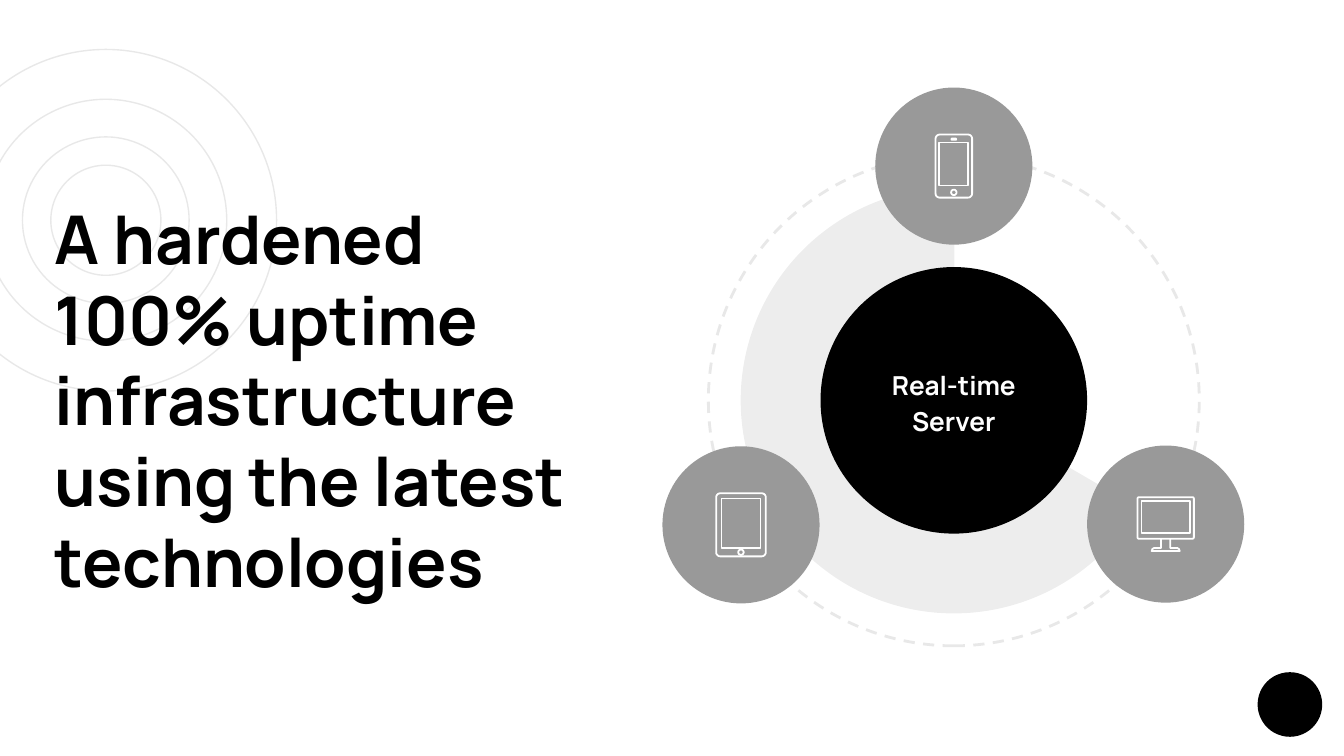
"""Build a slide with a headline beside a real-time server hub and three client devices."""
import math

from lxml import etree
from pptx import Presentation, dml, util as u
from pptx.dml import color as dml_color
from pptx.enum import dml as line_styles, shapes, text
from pptx.oxml import ns

BLACK, WHITE, GREY, PALE = "000000", "FFFFFF", "999999", "E8E8E8"
SHAPE = shapes.MSO_SHAPE
DETAIL = 100


def rgb(value):
    return dml_color.RGBColor.from_string(value)


def rounded(x, y, width, height, radius=0):
    """Return the closed outline of a rounded rectangle centred on (x, y)."""
    if not radius:
        right, bottom = width / 2, height / 2
        return [(x + right, y + bottom), (x - right, y + bottom),
                (x - right, y - bottom), (x + right, y - bottom)], True
    points = []
    for quarter, (side, level) in enumerate([(1, 1), (-1, 1), (-1, -1), (1, -1)]):
        corner_x = x + side * (width / 2 - radius)
        corner_y = y + level * (height / 2 - radius)
        for step in range(6):
            angle = math.radians(90 * quarter + 18 * step)
            points.append((corner_x + radius * math.cos(angle),
                           corner_y + radius * math.sin(angle)))
    return points, True


def stand(x, top, bottom):
    """Return the open outline of a monitor stand."""
    half = [(2.5, top), (2.5, bottom - 1.6), (6.2, bottom - 1.6),
            (7.1, bottom - 1.1), (7.5, bottom)]
    left = [(x - reach, y) for reach, y in half]
    right = [(x + reach, y) for reach, y in reversed(half)]
    return left + right, False


class Deck:
    """Hold the text style and the current slide."""

    font = {"name": "Manrope", "bold": True}

    def __init__(self, slide):
        self.slide = slide

    def paint(self, shape, fill=None, line=None, weight=0.75, alpha=None):
        shape.shadow.inherit = False
        if fill:
            shape.fill.solid()
            shape.fill.fore_color.rgb = rgb(fill)
        else:
            shape.fill.background()
        if alpha:
            color = shape.element.spPr.find(".//" + ns.qn("a:srgbClr"))
            etree.SubElement(color, ns.qn("a:alpha")).set("val", str(alpha * 1000))
        if line:
            shape.line.color.rgb = rgb(line)
            shape.line.width = u.Pt(weight)
        else:
            shape.line.fill.background()

    def disc(self, x, y, diameter, kind=SHAPE.OVAL, **style):
        corner = [u.Pt(value - diameter / 2) for value in (x, y)]
        shape = self.slide.shapes.add_shape(kind, *corner, u.Pt(diameter), u.Pt(diameter))
        self.paint(shape, **style)
        return shape

    def icon(self, x, y, outlines):
        builder = None
        for points, closed in outlines:
            start, *others = [((x + across) * DETAIL, (y + down) * DETAIL)
                              for across, down in points]
            if builder is None:
                builder = self.slide.shapes.build_freeform(*start, scale=u.Pt(1) / DETAIL)
            else:
                builder.move_to(*start)
            builder.add_line_segments(others, close=closed)
        self.paint(builder.convert_to_shape(), line=WHITE, weight=0.96)

    def words(self, box, lines, size, color, anchor=text.MSO_ANCHOR.TOP, **layout):
        frame = self.slide.shapes.add_textbox(*map(u.Pt, box)).text_frame
        margins = {f"margin_{side}": u.Pt(7.2) for side in ("left", "top", "right", "bottom")}
        for name, value in {"word_wrap": True, "vertical_anchor": anchor, **margins}.items():
            setattr(frame, name, value)
        for index, line in enumerate(lines):
            paragraph = frame.add_paragraph() if index else frame.paragraphs[0]
            run = paragraph.add_run()
            run.text = line
            for name, value in layout.items():
                setattr(paragraph, name, value)
            for name, value in {**self.font, "size": u.Pt(size)}.items():
                setattr(run.font, name, value)
            run.font.color.rgb = rgb(color)


def main():
    presentation = Presentation()
    presentation.slide_width, presentation.slide_height = u.Pt(720), u.Pt(405)
    deck = Deck(presentation.slides.add_slide(presentation.slide_layouts[6]))

    for diameter in (183, 89.3, 129.6, 59):
        deck.disc(56.7, 118, diameter, line=PALE)
    deck.disc(691, 377.4, 34.6, fill=BLACK)

    hub = (511, 214.5)
    orbit = deck.disc(*hub, 263, line=PALE, weight=1.5)
    orbit.rotation = 270
    orbit.line.dash_style = line_styles.MSO_LINE.DASH
    sector = deck.disc(*hub, 228.3, kind=SHAPE.PIE, fill=BLACK, alpha=7)
    sector.adjustments[0], sector.adjustments[1] = 18.116, 162.149
    deck.disc(*hub, 142.8, fill=BLACK)
    deck.words((458, 182.2, 106, 64.8), ["Real-time", "Server"], 14, WHITE,
               anchor=text.MSO_ANCHOR.MIDDLE,
               alignment=text.PP_ALIGN.CENTER, line_spacing=1.14)

    button = (2.9, 2.9, 1.45)
    tablet = [rounded(0, 0, 26.6, 33.8, 2.2), rounded(0, 14.7, *button),
              rounded(0, -0.8, 20.9, 26.6)]
    phone = [rounded(0, 0, 19.6, 33.8, 2.2), rounded(0, -14.4, 2.5, 0.7, 0.35),
             rounded(0, 14.1, *button), rounded(0, -1.1, 15.6, 23)]
    monitor = [rounded(0, -3.3, 30.2, 22.3, 0.8), rounded(0, -3.7, 25.9, 17.3)]
    devices = [((511, 89), [phone]), ((397, 281.2), [tablet]),
               ((624.5, 280.8), [[stand(0, 7.9, 14.4)], monitor])]
    for center, _ in devices:
        deck.disc(*center, 84.2, fill=GREY)
    for center, icons in devices:
        for outlines in icons:
            deck.icon(*center, outlines)

    deck.words((22.3, 98.6, 365.8, 231.8),
               ["A hardened", "100% uptime infrastructure", "using the latest technologies"],
               36, BLACK)
    presentation.save("out.pptx")


if __name__ == "__main__":
    main()
